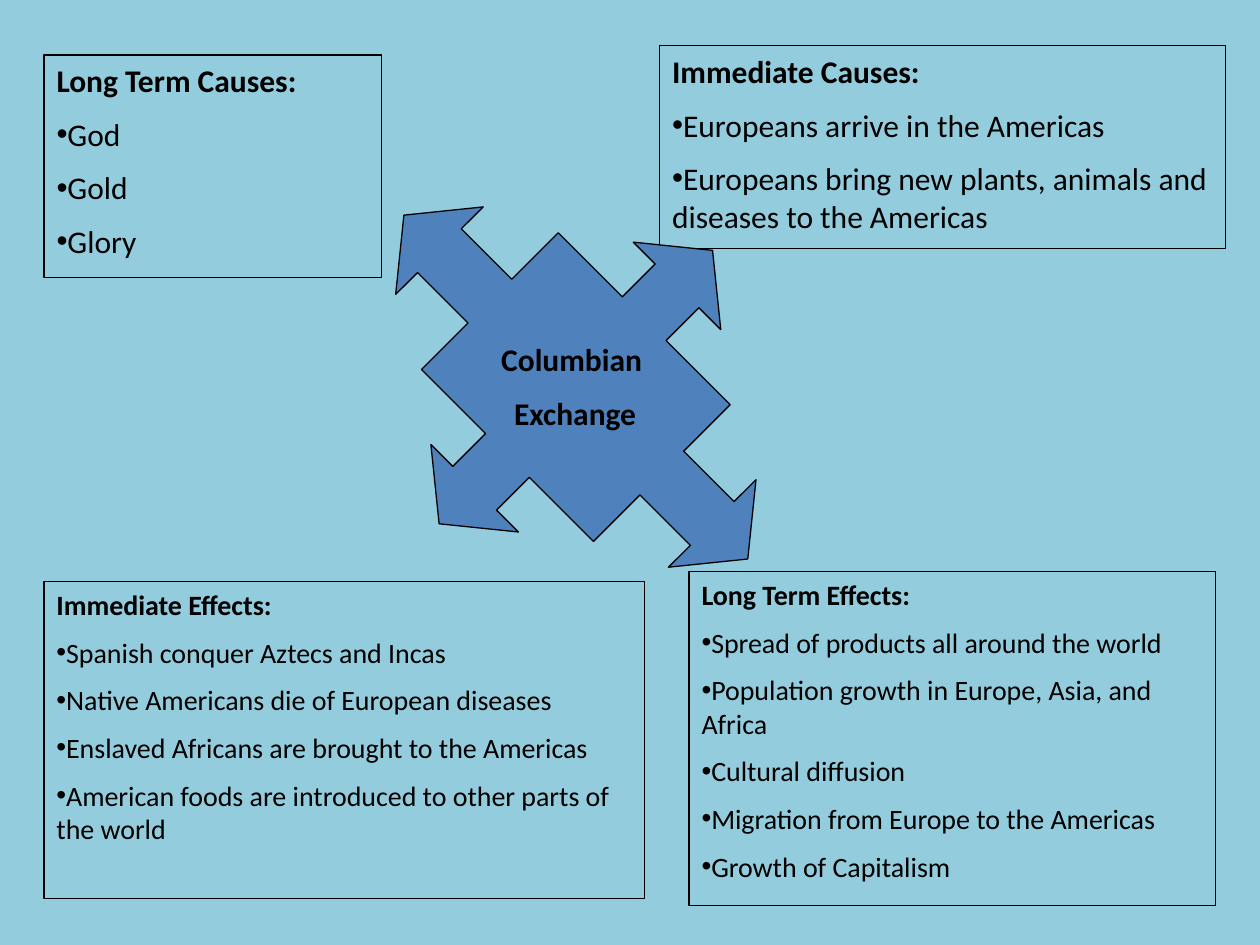
from lxml import etree
from pptx import Presentation
from pptx.dml.color import RGBColor as Rgb
from pptx.enum import shapes, text
from pptx.oxml.ns import qn
from pptx.util import Pt

# Content: heading, points, (left, top, width, height), type size
CARDS = [
    ("Immediate Causes:",
     ["Europeans arrive in the Americas",
      "Europeans bring new plants, animals and diseases to the Americas"],
     (377, 26.2, 323.5, 116), "large"),
    ("Immediate Effects:",
     ["Spanish conquer Aztecs and Incas",
      "Native Americans die of European diseases",
      "Enslaved Africans are brought to the Americas",
      "American foods are introduced to other parts of the world"],
     (25.2, 332.4, 343, 181.2), "small"),
    ("Long Term Effects:",
     ["Spread of products all around the world",
      "Population growth in Europe, Asia, and Africa",
      "Cultural diffusion",
      "Migration from Europe to the Americas",
      "Growth of Capitalism"],
     (393.8, 326.6, 301, 191), "small"),
    ("Long Term Causes:", ["God", "Gold", "Glory"],
     (25.2, 31.5, 193, 127.3), "large"),
]
TOPIC = ["Columbian ", "Exchange"]
TOPIC_BOX = (212.4, 190.8, 232.6, 61.2)
ARROW_BOX = (190.1, 110.7, 277.9, 221)
ARROW_CUTS = (0.16, 0.16, 0.13, 0.5)  # shaft, head half width, head length, core

THEME = {
    "font": "Calibri", "large": 18, "small": 16, "line": 0.75,
    "ink": Rgb(0, 0, 0),
    "back": Rgb(0x93, 0xCD, 0xDD),
    "arrow": Rgb(0x4F, 0x81, 0xBD),
}


def place(box):
    return [Pt(n) for n in box]


def outline(shape):
    shape.shadow.inherit = False
    shape.line.color.rgb = THEME["ink"]
    shape.line.width = Pt(THEME["line"])


def write(shape, rows, size, align):
    """Fill a frame with rows of (words, bold, bullet)."""
    frame = shape.text_frame
    frame.word_wrap = True
    frame.auto_size = text.MSO_AUTO_SIZE.NONE
    frame.vertical_anchor = text.MSO_ANCHOR.TOP
    for i, (words, bold, bullet) in enumerate(rows):
        para = frame.add_paragraph() if i else frame.paragraphs[0]
        para.alignment = align
        para.space_before = Pt(size / 2 if i else 0)
        if bullet:
            props = para._p.get_or_add_pPr()
            etree.SubElement(props, qn("a:buFont"), typeface="Arial")
            etree.SubElement(props, qn("a:buChar"), char="•")
        run = para.add_run()
        run.text = words
        run.font.name = THEME["font"]
        run.font.size = Pt(size)
        run.font.bold = bold
        run.font.color.rgb = THEME["ink"]


def main():
    deck = Presentation()
    deck.slide_width, deck.slide_height = Pt(720), Pt(540)
    slide = deck.slides.add_slide(deck.slide_layouts[6])
    slide.background.fill.solid()
    slide.background.fill.fore_color.rgb = THEME["back"]

    # Cause and effect cards
    for head, points, box, size in CARDS:
        card = slide.shapes.add_shape(
            shapes.MSO_SHAPE.RECTANGLE, *place(box))
        card.fill.background()
        outline(card)
        rows = [(head, True, False)] + [(p, False, True) for p in points]
        write(card, rows, THEME[size], text.PP_ALIGN.LEFT)

    # Four-way arrow
    arrow = slide.shapes.add_shape(
        shapes.MSO_SHAPE.QUAD_ARROW_CALLOUT, *place(ARROW_BOX))
    for i, cut in enumerate(ARROW_CUTS):
        arrow.adjustments[i] = cut
    arrow.rotation = 45
    arrow.fill.solid()
    arrow.fill.fore_color.rgb = THEME["arrow"]
    outline(arrow)

    # Topic in the middle
    topic = slide.shapes.add_textbox(*place(TOPIC_BOX))
    write(topic, [(t, True, False) for t in TOPIC], THEME["large"],
          text.PP_ALIGN.CENTER)

    deck.save("out.pptx")


if __name__ == "__main__":
    main()
